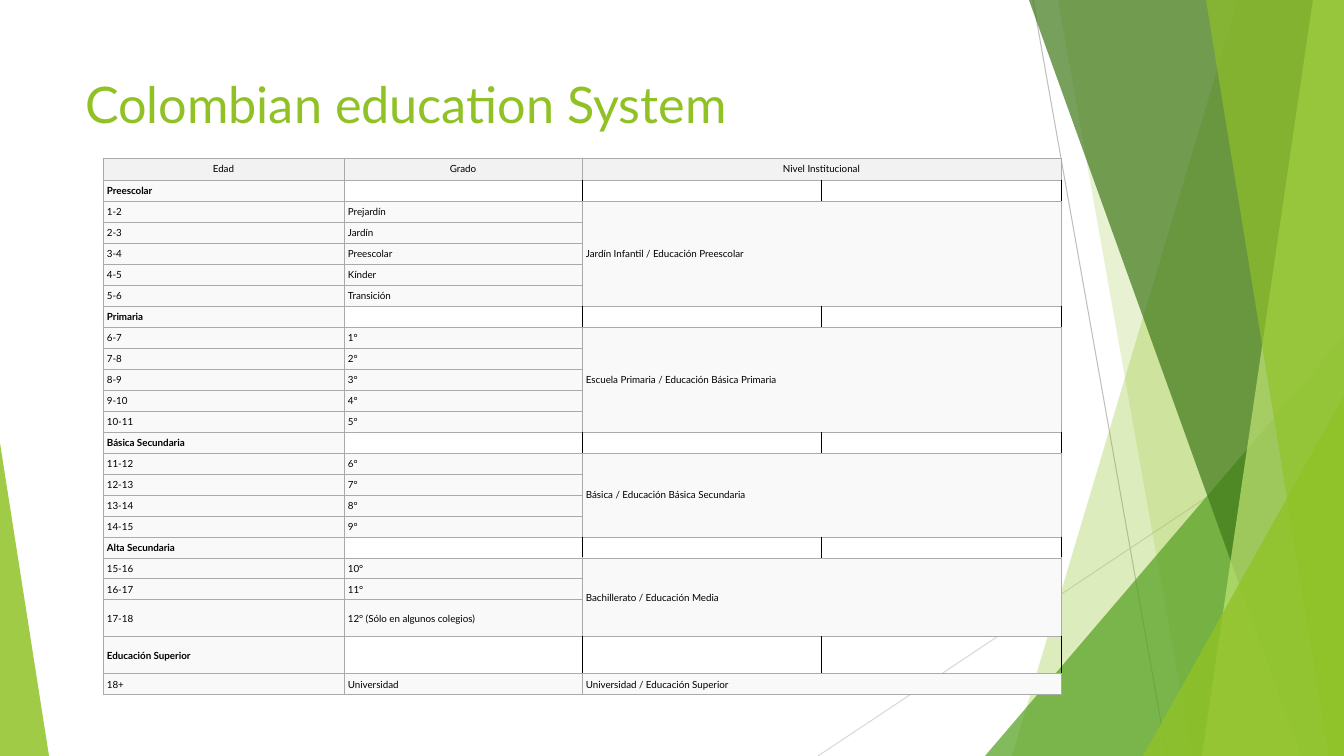
from lxml.etree import SubElement
from pptx import Presentation
from pptx.dml.color import RGBColor
from pptx.enum.shapes import MSO_CONNECTOR, MSO_SHAPE
from pptx.enum.text import MSO_ANCHOR, MSO_AUTO_SIZE, PP_ALIGN
from pptx.oxml.ns import qn
from pptx.util import Emu, Pt

PX = 914400 / 100.8
WIDTH, HEIGHT = 1344, 756
FONT, GREEN, GREY, BLACK = "Lato", "90C226", "AAAAAA", "000000"
HEADER = ("Edad", "Grado", "Nivel Institucional")
LEVELS = [
    ("Preescolar", "Jardín Infantil / Educación Preescolar",
     [("1-2", "Prejardín"), ("2-3", "Jardín"), ("3-4", "Preescolar"),
      ("4-5", "Kínder"), ("5-6", "Transición")]),
    ("Primaria", "Escuela Primaria / Educación Básica Primaria",
     [(f"{n + 5}-{n + 6}", f"{n}°") for n in range(1, 6)]),
    ("Básica Secundaria", "Básica / Educación Básica Secundaria",
     [(f"{n + 5}-{n + 6}", f"{n}°") for n in range(6, 10)]),
    ("Alta Secundaria", "Bachillerato / Educación Media",
     [("15-16", "10°"), ("16-17", "11°"), ("17-18", "12° (Sólo en algunos colegios)")]),
    ("Educación Superior", "Universidad / Educación Superior", [("18+", "Universidad")]),
]
TALL_ROWS = ("17-18", "Educación Superior")


def px(*lengths):
    """Turn pixel lengths into a list of EMU."""
    return [Emu(round(n * PX)) for n in lengths]


def rgb(value):
    """Turn a hex string into a colour."""
    return RGBColor.from_string(value)


def paint(s, color, opacity):
    """Give a shape a translucent fill, no line and no shadow."""
    s.shadow.inherit = False
    s.line.fill.background()
    s.fill.solid()
    s.fill.fore_color.rgb = rgb(color)
    clr = s.fill._xPr.find(f".//{qn('a:srgbClr')}")
    SubElement(clr, qn("a:alpha"), val=str(opacity * 1000))


def add_line(shapes, start, end, color):
    """Draw a thin straight line without a shadow."""
    line = shapes.add_connector(MSO_CONNECTOR.STRAIGHT, *px(*start, *end))
    line.line.color.rgb = rgb(color)
    line.line.width = Pt(0.75)
    SubElement(line._element.spPr, qn("a:effectLst"))


def add_triangle(shapes, box, apex, color, opacity):
    """Draw a triangle whose apex lies at a share of its width."""
    s = shapes.add_shape(MSO_SHAPE.ISOSCELES_TRIANGLE, *px(*box))
    s.adjustments[0] = apex
    paint(s, color, opacity)


def add_facets(shapes, x, y, w, h):
    """Layer the translucent facets along the right edge of the box."""
    right, bottom = x + w, y + h

    def band(top_x, bottom_x, color, opacity):
        """Fill from a slanted left side to the right edge."""
        outline = shapes.build_freeform(x + top_x, y, scale=PX)
        outline.add_line_segments([(right, y), (right, bottom), (x + bottom_x, bottom)])
        paint(outline.convert_to_shape(), color, opacity)

    def corner(dx, dy, color, opacity):
        """Fill the bottom right corner with a triangle."""
        add_triangle(shapes, (x + dx, y + dy, w - dx, h - dy), 1, color, opacity)

    add_line(shapes, (x + 215, y), (x + 349, bottom), "BFBFBF")
    add_line(shapes, (right, y + 406), (x, bottom), "D9D9D9")
    band(420, 194, GREEN, 30)
    band(240, 374, GREEN, 20)
    corner(167, 336, "54A021", 72)
    band(211, 483, "3F7819", 70)
    band(495, 384, "C0E474", 70)
    band(388, 511, GREEN, 65)
    corner(325, 396, GREEN, 80)


def add_title(title, x, y, w, h):
    """Place and format the title placeholder."""
    title.left, title.top, title.width, title.height = px(x, y, w, h)
    tf = title.text_frame
    tf.text = "Colombian education System"
    tf.auto_size = MSO_AUTO_SIZE.NONE
    tf.word_wrap = True
    tf.vertical_anchor = MSO_ANCHOR.TOP
    p = tf.paragraphs[0]
    p.alignment = PP_ALIGN.LEFT
    font = p.runs[0].font
    font.name, font.size, font.color.rgb = FONT, Pt(36), rgb(GREEN)


def format_cell(cell, fill=None, left=GREY, right=GREY):
    """Set the insets, borders and fill of a cell."""
    cell.margin_left, cell.margin_top, cell.margin_right, cell.margin_bottom = px(4, 2, 4, 2)
    cell.vertical_anchor = MSO_ANCHOR.MIDDLE
    tcPr = cell._tc.get_or_add_tcPr()
    for side, color in zip("LRTB", (left, right, GREY, GREY)):
        ln = SubElement(tcPr, qn(f"a:ln{side}"), w=str(Pt(0.6)))
        SubElement(SubElement(ln, qn("a:solidFill")), qn("a:srgbClr"), val=color)
    if fill:
        cell.fill.solid()
        cell.fill.fore_color.rgb = rgb(fill)
    else:
        cell.fill.background()
        p = cell.text_frame.paragraphs[0]._p
        SubElement(p, qn("a:endParaRPr"), sz="700")


def write_cell(cell, text, bold=False, align=PP_ALIGN.LEFT):
    """Put small black text into a cell."""
    p = cell.text_frame.paragraphs[0]
    p.text = text
    p.alignment = align
    font = p.runs[0].font
    font.name, font.size, font.bold, font.color.rgb = FONT, Pt(7), bold, rgb(BLACK)


def add_levels_table(shapes, x, y, w, h):
    """Build the table of ages, grades and school levels."""
    count = 1 + sum(1 + len(grades) for _, _, grades in LEVELS)
    table = shapes.add_table(count, 4, *px(x, y, w, h)).table
    table.first_row = table.horz_banding = False
    table._tbl.tblPr.find(qn("a:tableStyleId")).text = "{2D5ABB26-0587-4C30-8999-92F81FD0307C}"
    for column, width in zip(table.columns, px(241, 238, 239, 240)):
        column.width = width

    def fill_row(i, texts, fill, **style):
        """Fill and write one row of cells."""
        for j in range(4):
            format_cell(table.cell(i, j), fill)
        for j, text in enumerate(texts):
            write_cell(table.cell(i, j), text, **style)

    fill_row(0, HEADER, "F2F2F2", align=PP_ALIGN.CENTER)
    table.cell(0, 2).merge(table.cell(0, 3))
    i = 1
    for level, institution, grades in LEVELS:
        format_cell(table.cell(i, 0), "F9F9F9")
        write_cell(table.cell(i, 0), level, bold=True)
        for j in range(1, 4):
            format_cell(table.cell(i, j), left=GREY if j == 1 else BLACK, right=BLACK)
        first = i + 1
        for i, grade in enumerate(grades, first):
            fill_row(i, grade, "F9F9F9")
        write_cell(table.cell(first, 2), institution)
        table.cell(first, 2).merge(table.cell(i, 3))
        i += 1
    for i, row in enumerate(table.rows):
        tall = row.cells[0].text in TALL_ROWS
        row.height = px(37 if tall else 21 if i else 22)[0]


def main():
    """Build the slide and save it."""
    prs = Presentation()
    prs.slide_width, prs.slide_height = px(WIDTH, HEIGHT)
    slide = prs.slides.add_slide(prs.slide_layouts[5])
    shapes = slide.shapes
    add_facets(shapes, 818, 0, 526, HEIGHT)
    add_triangle(shapes, (0, 443, 49, 313), 0, GREEN, 85)
    add_title(shapes.title, 75, 68, 948, 145)
    add_levels_table(shapes, 103, 158, 958, 537)
    prs.save("out.pptx")


if __name__ == "__main__":
    main()
